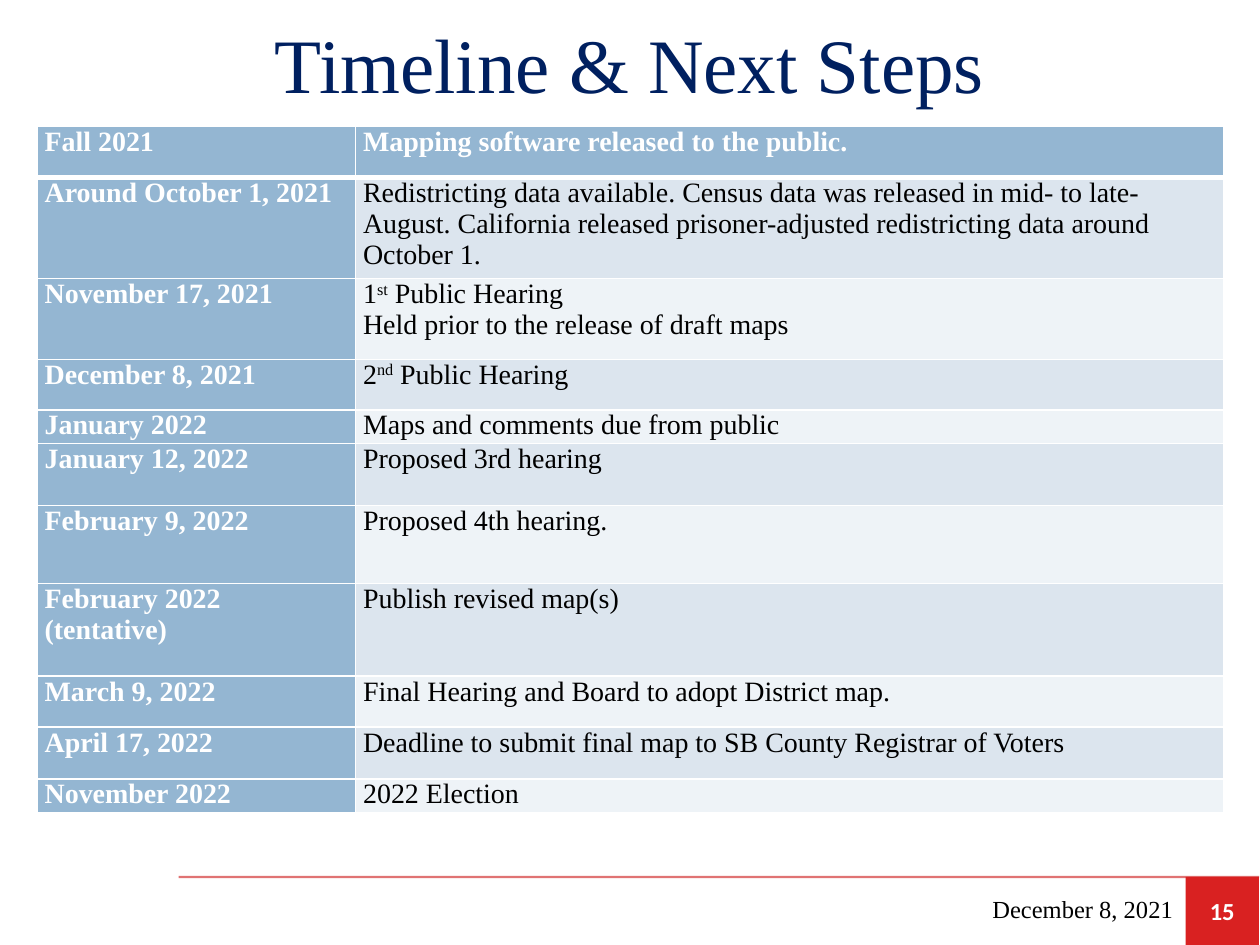
from lxml import etree
from pptx import Presentation
from pptx.dml.color import RGBColor
from pptx.enum import shapes, text
from pptx.oxml.ns import qn
from pptx.util import Cm, Pt

NAVY = RGBColor(0x00, 0x20, 0x60)
RED = RGBColor(0xD9, 0x21, 0x21)
RULE_RED = RGBColor(0xC8, 0x00, 0x00)
BLUE = RGBColor(0x94, 0xB6, 0xD2)
BANDS = RGBColor(0xDC, 0xE5, 0xEE), RGBColor(0xEE, 0xF3, 0xF7)
WHITE = RGBColor(0xFF, 0xFF, 0xFF)
BLACK = RGBColor(0x00, 0x00, 0x00)
SERIF = "Times New Roman"

# Row height in cm, date, step; ^ marks encloses superscript
STEPS = [
    (1.04, "Fall 2021", "Mapping software released to the public."),
    (1.86, "Around October 1, 2021\u00a0",
     "Redistricting data available. Census data was released in mid- to late-August. "
     "California released prisoner-adjusted redistricting data around October 1."),
    (1.63, "November 17, 2021",
     "1^st^ Public Hearing\nHeld prior to the release of draft maps"),
    (1.02, "December 8, 2021", "2^nd^ Public Hearing"),
    (0.62, "January 2022", "Maps and comments due from public"),
    (1.25, "January 12, 2022", "Proposed 3rd hearing"),
    (1.57, "February 9, 2022", "Proposed 4th hearing."),
    (1.87, "February 2022 (tentative)", "Publish revised map(s)"),
    (1.03, "March 9, 2022", "Final Hearing and Board to adopt District map."),
    (1.04, "April 17, 2022",
     "Deadline to submit final map to SB County Registrar of Voters"),
    (0.62, "November 2022", "2022 Election"),
]


def write(tf, content, size=16, color=BLACK, bold=False, font=SERIF, align=None):
    """Fill a text frame: newlines split paragraphs, ^ pairs enclose superscript."""
    tf.word_wrap = True
    for i, line in enumerate(content.split("\n")):
        p = tf.add_paragraph() if i else tf.paragraphs[0]
        p.alignment = align
        for j, part in enumerate(line.split("^")):
            r = p.add_run()
            r.text = part
            r.font.name, r.font.size, r.font.bold = font, Pt(size), bold
            r.font.color.rgb = color
            if j % 2:
                r.font._element.set("baseline", "30000")


def add_label(s, box, content, **fmt):
    tf = s.shapes.add_textbox(*map(Cm, box)).text_frame
    tf.vertical_anchor = text.MSO_ANCHOR.MIDDLE
    write(tf, content, **fmt)


def set_borders(cell, widths):
    """Draw white borders, given widths in points by side tag."""
    tcPr = cell._tc.get_or_add_tcPr()
    for i, (side, width) in enumerate(widths.items()):
        ln = etree.Element(qn(f"a:{side}"), w=str(Pt(width)))
        fill = etree.SubElement(ln, qn("a:solidFill"))
        etree.SubElement(fill, qn("a:srgbClr"), val=str(WHITE))
        tcPr.insert(i, ln)


def add_timeline(s, left, top, widths):
    height = sum(step[0] for step in STEPS)
    table = s.shapes.add_table(len(STEPS), 2, Cm(left), Cm(top),
                               Cm(sum(widths)), Cm(height)).table
    for column, width in zip(table.columns, widths):
        column.width = Cm(width)
    for i, (row_height, *contents) in enumerate(STEPS):
        table.rows[i].height = Cm(row_height)
        for j, content in enumerate(contents):
            cell = table.cell(i, j)
            heading = i == 0 or j == 0
            cell.margin_left = cell.margin_right = Cm(0.15)
            cell.margin_top = cell.margin_bottom = 0
            cell.fill.solid()
            cell.fill.fore_color.rgb = BLUE if heading else BANDS[(i - 1) % 2]
            write(cell.text_frame, content, bold=heading,
                  color=WHITE if heading else BLACK)
            set_borders(cell, {"lnL": 1, "lnR": 1, "lnT": 3 if i == 1 else 1,
                               "lnB": 1 if i else 3})


def add_footer(s, left, top, width, height):
    right = left + width
    badge_width = 1.48
    rule = s.shapes.add_connector(shapes.MSO_CONNECTOR.STRAIGHT,
                                  Cm(left), Cm(top), Cm(right), Cm(top))
    rule.line.color.rgb = RULE_RED
    rule.line.width = Pt(1.25)
    color = rule.line._ln.find(".//" + qn("a:srgbClr"))
    etree.SubElement(color, qn("a:alpha"), val="55000")
    etree.SubElement(rule._element.spPr, qn("a:effectLst"))

    badge = s.shapes.add_shape(shapes.MSO_SHAPE.RECTANGLE, Cm(right - badge_width),
                               Cm(top), Cm(badge_width), Cm(height))
    badge.shadow.inherit = False
    badge.fill.solid()
    badge.fill.fore_color.rgb = RED
    badge.line.fill.background()
    badge.text_frame.vertical_anchor = text.MSO_ANCHOR.MIDDLE
    write(badge.text_frame, "15", size=14, color=WHITE, bold=True, font="Calibri",
          align=text.PP_ALIGN.CENTER)
    add_label(s, (right - badge_width - 7.42, top + 0.13, 7.42, 1.02),
              "December 8, 2021", size=14, align=text.PP_ALIGN.RIGHT)


def main():
    prs = Presentation()
    prs.slide_width, prs.slide_height = Cm(25.4), Cm(19.05)
    s = prs.slides.add_slide(prs.slide_layouts[6])
    add_footer(s, 3.6, 17.68, 21.78, 1.37)
    add_label(s, (0, 0, 25.4, 2.54), "Timeline & Next Steps", size=44, color=NAVY,
              align=text.PP_ALIGN.CENTER)
    add_timeline(s, 0.75, 2.54, (6.42, 17.5))
    prs.save("out.pptx")


if __name__ == "__main__":
    main()
